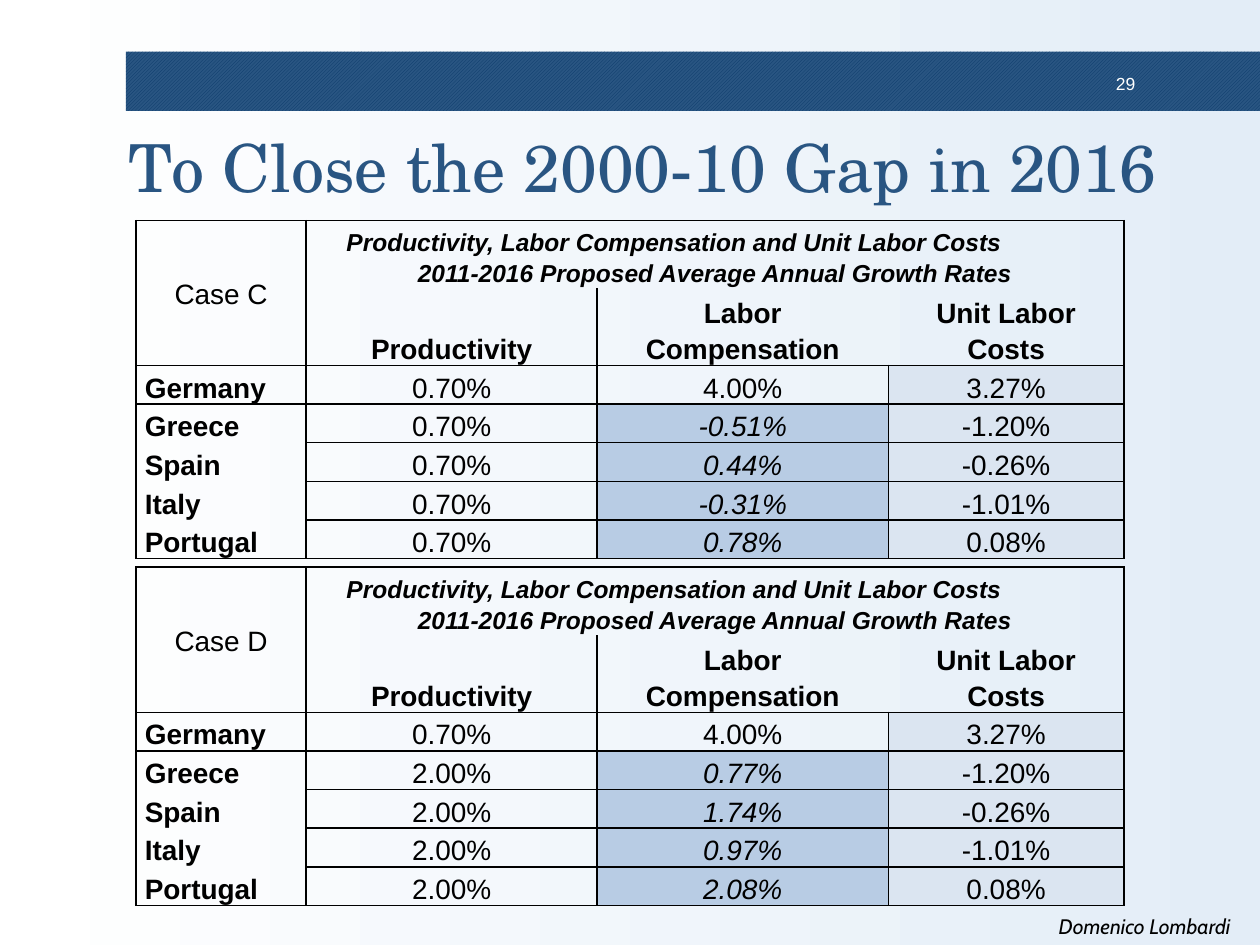
from dataclasses import dataclass
from typing import Any

from lxml.etree import SubElement
from pptx import Presentation
from pptx.dml.color import RGBColor
from pptx.enum.dml import MSO_PATTERN
from pptx.enum.shapes import MSO_SHAPE
from pptx.enum.text import MSO_ANCHOR, PP_ALIGN
from pptx.oxml.ns import qn
from pptx.util import Inches, Pt

WHITE = RGBColor(0xFF, 0xFF, 0xFF)
BLACK = RGBColor(0x00, 0x00, 0x00)
NAVY = RGBColor(0x29, 0x55, 0x82)
DEEP = RGBColor(0x08, 0x38, 0x68)
HAZE = RGBColor(0xE3, 0xED, 0xF7)
PALE = RGBColor(0xDB, 0xE5, 0xF1)
BLUE = RGBColor(0xB8, 0xCC, 0xE4)

PLAIN = "{2D5ABB26-0587-4C30-8999-92F81FD0307C}"
LANDS = ["Germany", "Greece", "Spain", "Italy", "Portugal"]
COSTS = ["3.27%", "-1.20%", "-0.26%", "-1.01%", "0.08%"]
HEADS = ["Productivity", "Labor Compensation", "Unit Labor Costs"]
SPAN = [
    "Productivity, Labor Compensation and Unit Labor Costs",
    "2011-2016 Proposed Average Annual Growth Rates",
]
WIDTHS = [1.35, 2.31, 2.31, 1.87]


@dataclass
class Case:
    name: str
    top: float
    row: float
    gain: str
    wages: list[str]


CASES = [
    Case("Case C", 1.75, 0.26, "0.70%", ["4.00%", "-0.51%", "0.44%", "-0.31%", "0.78%"]),
    Case("Case D", 4.5, 0.27, "2.00%", ["4.00%", "0.77%", "1.74%", "0.97%", "2.08%"]),
]


@dataclass
class Look:
    size: float = 16
    bold: bool = False
    slant: bool = False
    face: str = "Arial"
    ink: RGBColor = BLACK
    align: Any = PP_ALIGN.CENTER


def style(para: Any, look: Look) -> None:
    para.alignment = look.align
    font = para.font
    font.size = Pt(look.size)
    font.bold = look.bold
    font.italic = look.slant
    font.name = look.face
    font.color.rgb = look.ink


def edge(cell: Any, sides: str) -> None:
    props = cell._tc.get_or_add_tcPr()
    for side in "LRTB":
        if side in sides:
            line = SubElement(props, qn(f"a:ln{side}"), w=str(Pt(1)))
            paint = SubElement(line, qn("a:solidFill"))
            SubElement(paint, qn("a:srgbClr"), val=str(BLACK))


def put(cell: Any, text: str, look: Look, sides: str, fill: RGBColor | None = None) -> None:
    cell.margin_left = cell.margin_right = Inches(0.07)
    cell.margin_top = cell.margin_bottom = 0
    cell.vertical_anchor = MSO_ANCHOR.BOTTOM
    edge(cell, sides)
    if fill is None:
        cell.fill.background()
    else:
        cell.fill.solid()
        cell.fill.fore_color.rgb = fill
    cell.text = text
    for para in cell.text_frame.paragraphs:
        style(para, look)
        para.line_spacing = 1.15


def draw(slide: Any, case: Case) -> None:
    rows = [case.row * 2] * 2 + [case.row] * len(LANDS)
    frame = slide.shapes.add_table(
        len(rows), len(WIDTHS), Inches(1.08), Inches(case.top),
        Inches(sum(WIDTHS)), Inches(sum(rows)),
    )
    table = frame.table
    table._tbl.tblPr.find(qn("a:tableStyleId")).text = PLAIN
    table.first_row = table.horz_banding = False
    for col, width in zip(table.columns, WIDTHS):
        col.width = Inches(width)
    for row, height in zip(table.rows, rows):
        row.height = Inches(height)

    bold = Look(bold=True)
    put(table.cell(0, 0), case.name, Look(), "LRTB")
    table.cell(0, 0).vertical_anchor = MSO_ANCHOR.MIDDLE
    edge(table.cell(1, 0), "LRB")
    table.cell(0, 0).merge(table.cell(1, 0))

    span = table.cell(0, 1)
    put(span, "\n".join(SPAN), Look(14, True, True), "LRT")
    first = span.text_frame.paragraphs[0]
    first.alignment = PP_ALIGN.LEFT
    first._p.get_or_add_pPr().set("marL", str(Inches(0.25)))
    edge(table.cell(0, 2), "T")
    edge(table.cell(0, 3), "RT")
    span.merge(table.cell(0, 3))

    for col, (head, sides) in enumerate(zip(HEADS, ["LB", "B", "RB"]), 1):
        put(table.cell(1, col), head, bold, sides)

    left = Look(bold=True, align=PP_ALIGN.LEFT)
    for at, (land, wage, cost) in enumerate(zip(LANDS, case.wages, COSTS)):
        base = at == 0
        sides = "LR" + ("T" if base else "") + ("B" if land == LANDS[-1] else "")
        cells = table.rows[at + 2].cells
        put(cells[0], land, left, sides)
        put(cells[1], "0.70%" if base else case.gain, Look(), "LRTB")
        put(cells[2], wage, Look(slant=not base), "LRTB", None if base else BLUE)
        put(cells[3], cost, Look(), "LRTB", PALE)


def label(slide: Any, text: str, box: tuple, look: Look, pad: tuple, wrap: bool) -> None:
    shape = slide.shapes.add_textbox(*map(Inches, box))
    frame = shape.text_frame
    frame.word_wrap = wrap
    frame.margin_left = frame.margin_right = Inches(pad[0])
    frame.margin_top = frame.margin_bottom = Inches(pad[1])
    frame.text = text
    style(frame.paragraphs[0], look)


def main() -> None:
    deck = Presentation()
    deck.slide_width, deck.slide_height = Inches(10), Inches(7.5)
    slide = deck.slides.add_slide(deck.slide_layouts[5])

    back = slide.background.fill
    back.gradient()
    back.gradient_angle = 0
    for stop, tint in zip(back.gradient_stops, [WHITE, HAZE]):
        stop.color.rgb = tint

    band = slide.shapes.add_shape(
        MSO_SHAPE.RECTANGLE, Inches(1), Inches(0.41), Inches(9), Inches(0.47)
    )
    band.shadow.inherit = False
    band.line.fill.background()
    band.fill.patterned()
    band.fill.pattern = MSO_PATTERN.LIGHT_UPWARD_DIAGONAL
    band.fill.fore_color.rgb = DEEP
    band.fill.back_color.rgb = NAVY

    page = Look(10, ink=WHITE, align=PP_ALIGN.RIGHT)
    label(slide, "29", (8.67, 0.54, 0.41, 0.23), page, (0.07, 0.04), True)

    title = slide.shapes.title
    title.left, title.top = Inches(0.98), Inches(0.83)
    title.width, title.height = Inches(8.44), Inches(0.98)
    frame = title.text_frame
    frame.margin_left = frame.margin_right = Inches(0.04)
    frame.margin_top = frame.margin_bottom = Inches(0.04)
    frame.vertical_anchor = MSO_ANCHOR.MIDDLE
    frame.text = "To Close the 2000-10 Gap in 2016"
    style(frame.paragraphs[0], Look(37.8, face="TeX Gyre Schola", ink=NAVY, align=PP_ALIGN.LEFT))

    for case in CASES:
        draw(slide, case)

    name = Look(12, slant=True, face="Cabin")
    label(slide, "Domenico Lombardi", (8.3, 7.2, 1.57, 0.3), name, (0.1, 0.05), False)
    deck.save("out.pptx")


if __name__ == "__main__":
    main()
